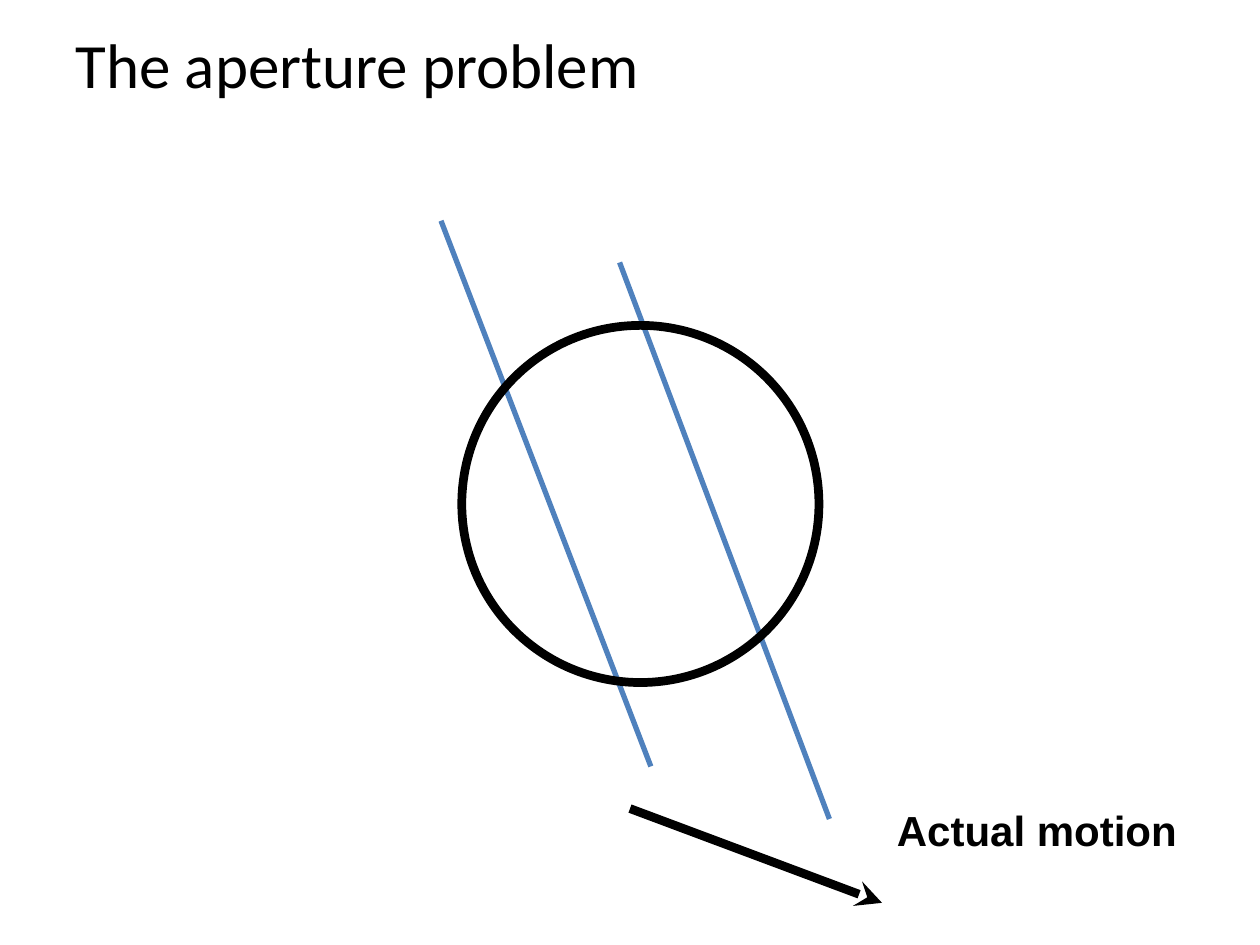
from pptx import Presentation
from pptx.dml.color import RGBColor
from pptx.enum.shapes import MSO_CONNECTOR as Link, MSO_SHAPE as Form
from pptx.enum.text import MSO_ANCHOR as Anchor, MSO_AUTO_SIZE as Fit, PP_ALIGN as Align
from pptx.oxml.ns import qn
from pptx.util import Cm, Pt
from lxml.etree import SubElement

BLACK = RGBColor(0x00, 0x00, 0x00)
BLUE = RGBColor(0x4F, 0x81, 0xBD)


class Board:
    """Style and current slide; all lengths are in centimetres."""
    head = "Calibri"
    body = "Arial"
    thick = 5
    thin = 3

    def __init__(self, slide):
        self.slide = slide

    def add_run(self, frame, text, font, size, bold=False):
        para = frame.paragraphs[0]
        para.alignment = Align.LEFT
        run = para.add_run()
        run.text = text
        run.font.name = font
        run.font.size = Pt(size)
        run.font.bold = bold
        run.font.color.rgb = BLACK

    def title(self, text, x, y, w, h):
        box = self.slide.shapes.title
        box.left, box.top, box.width, box.height = Cm(x), Cm(y), Cm(w), Cm(h)
        box.text_frame.vertical_anchor = Anchor.MIDDLE
        self.add_run(box.text_frame, text, self.head, 36)

    def label(self, text, x, y, w, h):
        frame = self.slide.shapes.add_textbox(Cm(x), Cm(y), Cm(w), Cm(h)).text_frame
        frame.word_wrap = False
        frame.auto_size = Fit.SHAPE_TO_FIT_TEXT
        self.add_run(frame, text, self.body, 24, True)

    def line(self, start, end, color, width, arrow=None):
        link = self.slide.shapes.add_connector(
            Link.STRAIGHT, *(Cm(v) for v in (*start, *end)))
        link.line.color.rgb = color
        link.line.width = Pt(width)
        props = link._element.spPr
        if arrow:
            SubElement(props.find(qn("a:ln")), qn("a:tailEnd"), type=arrow)
        SubElement(props, qn("a:effectLst"))

    def ring(self, x, y, size):
        ring = self.slide.shapes.add_shape(Form.OVAL, Cm(x), Cm(y), Cm(size), Cm(size))
        ring.shadow.inherit = False
        ring.fill.background()
        ring.line.color.rgb = BLACK
        ring.line.width = Pt(self.thick)


def main():
    deck = Presentation()
    deck.slide_width, deck.slide_height = Cm(25.4), Cm(19.05)
    board = Board(deck.slides.add_slide(deck.slide_layouts[5]))

    board.title("The aperture problem", 1.27, 0, 22.86, 2.54)

    # Moving edges behind the aperture
    for start, end in (((8.89, 4.45), (13.12, 15.45)),
                       ((12.49, 5.29), (16.72, 16.51))):
        board.line(start, end, BLUE, board.thin)
    board.ring(9.31, 6.56, 7.2)

    # True direction of motion
    board.line((12.7, 16.3), (17.78, 18.2), BLACK, board.thick, "stealth")
    board.label("Actual motion", 17.83, 16.09, 6.15, 1.27)

    deck.save("out.pptx")


if __name__ == "__main__":
    main()
